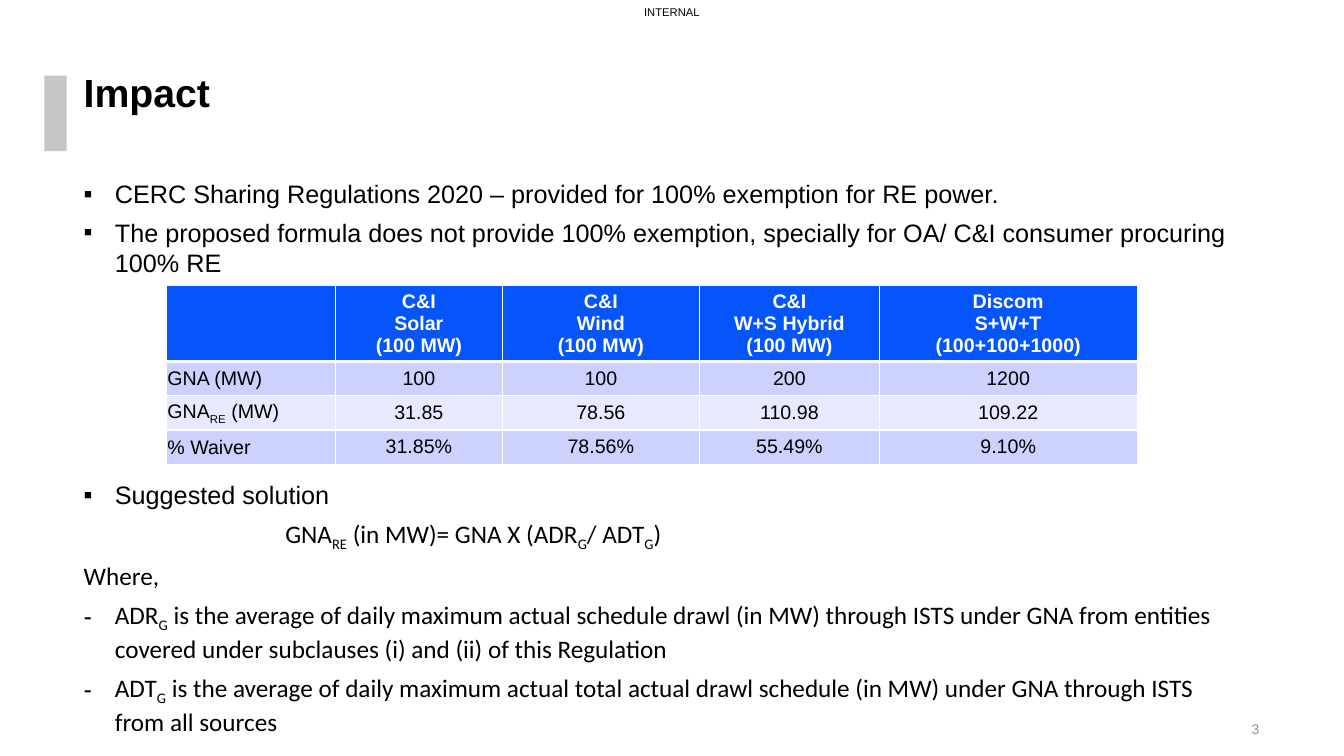
from lxml import etree
from pptx import Presentation
from pptx import util as u
from pptx.dml.color import RGBColor
from pptx.enum import shapes, text
from pptx.oxml import ns

BLACK = RGBColor(0x00, 0x00, 0x00)
WHITE = RGBColor(0xFF, 0xFF, 0xFF)
BAR_GRAY = RGBColor(0xC6, 0xC6, 0xC6)
NUMBER_GRAY = RGBColor(0x94, 0x94, 0x94)
HEADER_BLUE = RGBColor(0x05, 0x55, 0xFA)
BANDS = (RGBColor(0xCC, 0xD1, 0xFD), RGBColor(0xE7, 0xE9, 0xFE))

LEFT, CENTER, RIGHT = text.PP_ALIGN.LEFT, text.PP_ALIGN.CENTER, text.PP_ALIGN.RIGHT
TOP, MIDDLE = text.MSO_ANCHOR.TOP, text.MSO_ANCHOR.MIDDLE

HEADINGS = ["", "C&I\nSolar\n(100 MW)", "C&I\nWind\n(100 MW)",
            "C&I\nW+S Hybrid\n(100 MW)", "Discom\nS+W+T\n(100+100+1000)"]
WAIVERS = [
    ["GNA (MW)", "100", "100", "200", "1200"],
    ["GNA_RE_ (MW)", "31.85", "78.56", "110.98", "109.22"],
    ["% Waiver", "31.85%", "78.56%", "55.49%", "9.10%"],
]

POINTS = [
    ("CERC Sharing Regulations 2020 – provided for 100% exemption for RE power.",
     "Arial", "▪", 0.31, 0),
    ("The proposed formula does not provide 100% exemption, specially for OA/ C&I "
     "consumer procuring 100% RE", "Arial", "▪", 0.31, 0),
    ("Suggested solution", "Arial", "▪", 0.31, 138),
    ("GNA_RE_ (in MW)= GNA X (ADR_G_/ ADT_G_)", "Calibri", None, 2, 0),
    ("Where,", "Calibri", None, 0, 0),
    ("ADR_G_ is the average of daily maximum actual schedule drawl (in MW) through ISTS "
     "under GNA from entities covered under subclauses (i) and (ii) of this Regulation",
     "Calibri", "-", 0.31, 0),
    ("ADT_G_ is the average of daily maximum actual total actual drawl schedule (in MW) "
     "under GNA through ISTS from all sources", "Calibri", "-", 0.31, 0),
]


class ImpactSlide:
    def __init__(self, deck):
        self.slide = deck.slides.add_slide(deck.slide_layouts[1])

    def place(self, item, left, top, width, height):
        item.left, item.top = u.Inches(left), u.Inches(top)
        item.width, item.height = u.Inches(width), u.Inches(height)

    def frame(self, frame, anchor, right_margin=0.0):
        frame.word_wrap = True
        frame.auto_size = text.MSO_AUTO_SIZE.NONE
        frame.vertical_anchor = anchor
        frame.margin_left = frame.margin_top = frame.margin_bottom = 0
        frame.margin_right = u.Inches(right_margin)
        return frame

    def line(self, paragraph, wording, size, color=BLACK, align=LEFT, face="Arial", bold=False):
        for index, piece in enumerate(wording.split("_")):
            if piece:
                run = paragraph.add_run()
                run.text = piece
                if index % 2:
                    run.font._element.set("baseline", "-25000")
        paragraph.alignment = align
        font = paragraph.font
        font.name, font.size, font.bold = face, u.Pt(size), bold
        font.color.rgb = color

    def bullet(self, paragraph, mark, indent):
        props = paragraph._p.get_or_add_pPr()
        props.set("marL", str(u.Inches(indent)))
        props.set("indent", str(-u.Inches(indent) if mark else 0))
        if mark:
            etree.SubElement(props, ns.qn("a:buFont")).set("typeface", "Arial")
            etree.SubElement(props, ns.qn("a:buChar")).set("char", mark)
        else:
            etree.SubElement(props, ns.qn("a:buNone"))

    def bar(self, left, top, width, height, color):
        bar = self.slide.shapes.add_shape(
            shapes.MSO_SHAPE.RECTANGLE, *map(u.Inches, (left, top, width, height)))
        bar.shadow.inherit = False
        bar.fill.solid()
        bar.fill.fore_color.rgb = color
        bar.line.fill.background()

    def label(self, wording, left, top, width, height, size, color, align, anchor):
        label = self.slide.shapes.add_textbox(*map(u.Inches, (left, top, width, height)))
        frame = self.frame(label.text_frame, anchor)
        self.line(frame.paragraphs[0], wording, size, color, align)

    def title(self, wording, *area):
        title = self.slide.shapes.title
        self.place(title, *area)
        heading = self.frame(title.text_frame, TOP).paragraphs[0]
        heading.line_spacing = 0.9
        self.line(heading, wording, 28, bold=True)

    def body(self, points, *area):
        body = self.slide.placeholders[1]
        self.place(body, *area)
        frame = self.frame(body.text_frame, TOP, 0.2)
        for index, (wording, face, mark, indent, gap) in enumerate(points):
            point = frame.add_paragraph() if index else frame.paragraphs[0]
            self.bullet(point, mark, indent)
            point.space_before, point.space_after = u.Pt(gap), u.Pt(6)
            self.line(point, wording, 18, face=face)

    def borders(self, cell, bottom):
        props = cell._tc.get_or_add_tcPr()
        for side, width in (("L", 1), ("R", 1), ("T", 1), ("B", bottom)):
            edge = etree.SubElement(props, ns.qn("a:ln" + side), w=str(u.Pt(width)))
            fill = etree.SubElement(edge, ns.qn("a:solidFill"))
            etree.SubElement(fill, ns.qn("a:srgbClr"), val=str(WHITE))

    def table(self, rows, left, top, widths, heights):
        table = self.slide.shapes.add_table(
            len(rows), len(widths), *map(u.Inches, (left, top, sum(widths), sum(heights)))).table
        for column, width in zip(table.columns, widths):
            column.width = u.Inches(width)
        for r, (values, height) in enumerate(zip(rows, heights)):
            table.rows[r].height = u.Inches(height)
            header = r == 0
            for c, value in enumerate(values):
                cell = table.cell(r, c)
                self.borders(cell, 3 if header else 1)
                cell.fill.solid()
                cell.fill.fore_color.rgb = HEADER_BLUE if header else BANDS[(r - 1) % 2]
                cell.vertical_anchor = MIDDLE
                row_name = c == 0 and not header
                if row_name:
                    cell.margin_left = cell.margin_right = cell.margin_top = u.Inches(0.01)
                    cell.margin_bottom = 0
                for n, wording in enumerate(value.split("\n")):
                    frame = cell.text_frame
                    paragraph = frame.add_paragraph() if n else frame.paragraphs[0]
                    self.line(paragraph, wording, 14, WHITE if header else BLACK,
                              LEFT if row_name else CENTER, bold=header)


def main():
    deck = Presentation()
    deck.slide_width, deck.slide_height = u.Inches(13.33), u.Inches(7.5)
    impact = ImpactSlide(deck)
    impact.bar(0.44, 0.75, 0.22, 0.75, BAR_GRAY)
    impact.label("INTERNAL", 6.26, 0, 0.81, 0.24, 8, BLACK, CENTER, MIDDLE)
    impact.title("Impact", 0.83, 0.73, 9.16, 0.43)
    impact.body(POINTS, 0.83, 1.77, 11.66, 4.77)
    impact.label("3", 11.66, 7.15, 0.83, 0.14, 10, NUMBER_GRAY, RIGHT, TOP)
    impact.table([HEADINGS] + WAIVERS, 1.65, 2.83,
                 [1.68, 1.65, 1.96, 1.78, 2.56], [0.75] + [0.34] * len(WAIVERS))
    deck.save("out.pptx")


if __name__ == "__main__":
    main()
